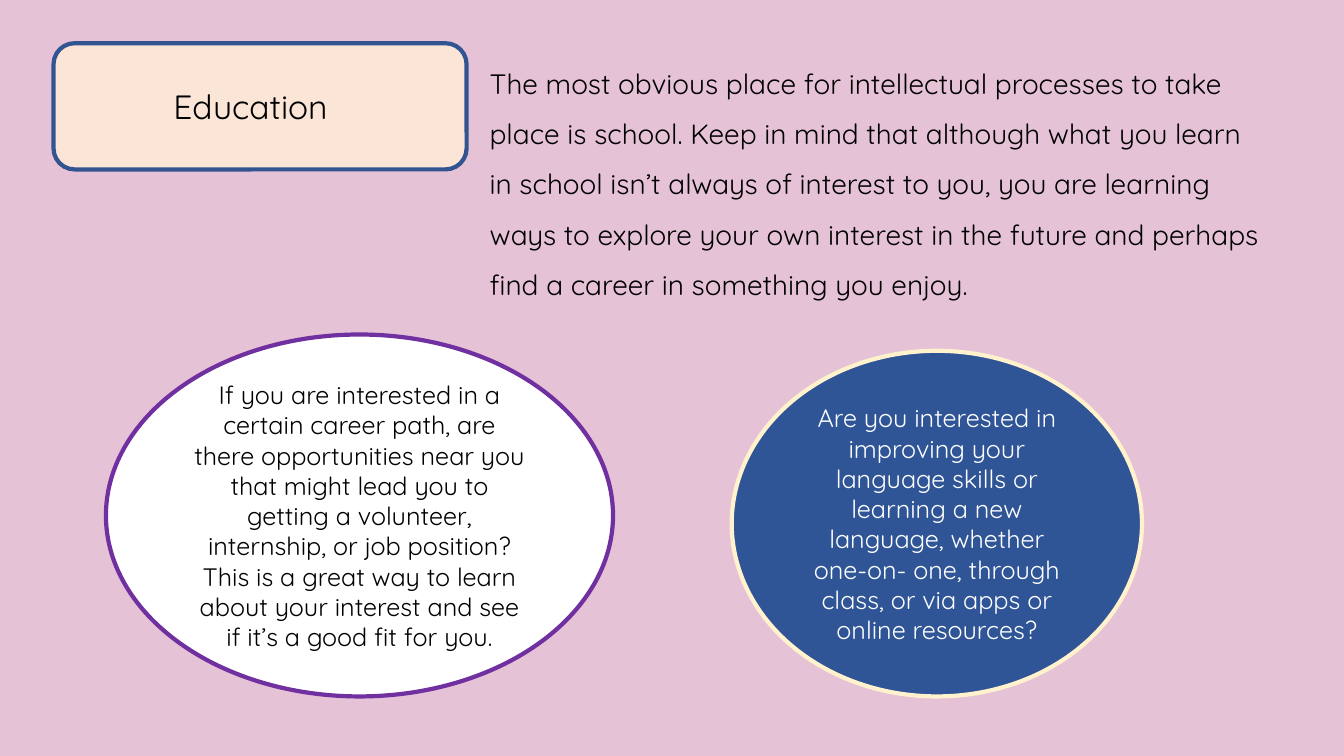
from pptx import Presentation
from pptx.dml.color import RGBColor
from pptx.enum.shapes import MSO_SHAPE
from pptx.enum.text import MSO_ANCHOR, MSO_AUTO_SIZE, PP_ALIGN
from pptx.util import Cm, Pt

INK = "000000"
WHITE = "FFFFFF"


def color(value):
    return RGBColor.from_string(value)


class EducationPage:
    font_name = "Quicksand"
    outline = Pt(3)

    def __init__(self, deck, background):
        self.page = deck.slides.add_slide(deck.slide_layouts[6])
        fill = self.page.background.fill
        fill.solid()
        fill.fore_color.rgb = color(background)

    def add_text(self, box, text, size, ink, align, line_spacing=None):
        box.text_frame.word_wrap = True
        para = box.text_frame.paragraphs[0]
        para.alignment = align
        para.line_spacing = line_spacing
        span = para.add_run()
        span.text = text
        span.font.name = self.font_name
        span.font.size = Pt(size)
        span.font.color.rgb = color(ink)

    def bubble(self, kind, place, fill, line, text, size, ink):
        """Add an outlined shape with centred text."""
        shape = self.page.shapes.add_shape(kind, *map(Cm, place))
        shape.shadow.inherit = False
        shape.fill.solid()
        shape.fill.fore_color.rgb = color(fill)
        shape.line.color.rgb = color(line)
        shape.line.width = self.outline
        shape.text_frame.vertical_anchor = MSO_ANCHOR.MIDDLE
        self.add_text(shape, text, size, ink, PP_ALIGN.CENTER)
        return shape

    def passage(self, place, text, size, line_spacing):
        box = self.page.shapes.add_textbox(*map(Cm, place))
        box.text_frame.auto_size = MSO_AUTO_SIZE.SHAPE_TO_FIT_TEXT
        self.add_text(box, text, size, INK, PP_ALIGN.LEFT, line_spacing)


def main():
    deck = Presentation()
    deck.slide_width, deck.slide_height = Cm(33.87), Cm(19.05)
    page = EducationPage(deck, "E6C2D7")

    page.bubble(
        MSO_SHAPE.OVAL, (18.44, 8.84, 10.34, 8.71), "2F5597", "FFF2CC",
        "Are you interested in improving your language skills or learning a new "
        "language, whether one-on- one, through class, or via apps or online "
        "resources?", 18, WHITE)
    page.bubble(
        MSO_SHAPE.OVAL, (2.67, 8.43, 12.78, 9.12), WHITE, "7030A0",
        "If you are interested in a certain career path, are there opportunities "
        "near you that might lead you to getting a volunteer, internship, or job "
        "position? This is a great way to learn about your interest and see if "
        "it’s a good fit for you.", 18, INK)
    title = page.bubble(
        MSO_SHAPE.ROUNDED_RECTANGLE, (1.35, 1.09, 10.41, 3.18), "FBE5D6", "325491",
        "Education", 24, INK)
    title.text_frame.margin_right = Cm(0.73)
    page.passage(
        (12.09, 1.12, 20.12, 6.5),
        "The most obvious place for intellectual processes to take place is "
        "school. Keep in mind that although what you learn in school isn’t "
        "always of interest to you, you are learning ways to explore your own "
        "interest in the future and perhaps find a career in something you enjoy.",
        20, 1.5)

    deck.save("out.pptx")


if __name__ == "__main__":
    main()
